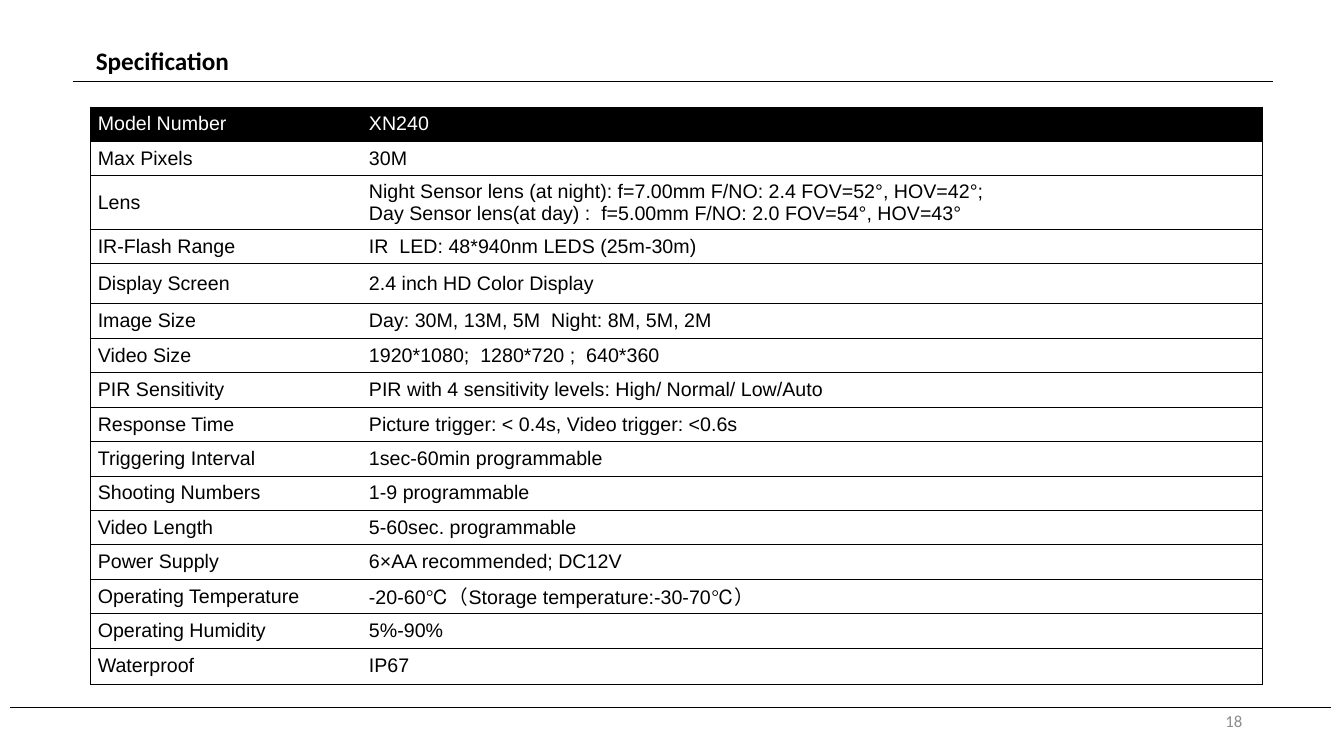
"""Build the specification slide with its two-column table."""
from lxml import etree
from pptx import Presentation
from pptx.dml.color import RGBColor
from pptx.enum import shapes, text
from pptx.oxml import ns
from pptx.util import Inches, Pt


def style(par, size, font, color):
    par.font.size = Pt(size)
    par.font.name = font
    par.font.color.rgb = RGBColor.from_string(color)


def border(cell, sides):
    props = cell._tc.get_or_add_tcPr()
    for spot, side in enumerate("LRTB"):
        line = etree.Element(ns.qn("a:ln" + side), w=str(Pt(0.5)))
        if side in sides:
            fill = etree.SubElement(line, ns.qn("a:solidFill"))
            etree.SubElement(fill, ns.qn("a:srgbClr"), val="000000")
        else:
            etree.SubElement(line, ns.qn("a:noFill"))
        props.insert(spot, line)


specs = [
    ("Model Number", "XN240"),
    ("Max Pixels", "30M"),
    ("Lens", "Night Sensor lens (at night): f=7.00mm F/NO: 2.4 FOV=52°, HOV=42°;\n"
             "Day Sensor lens(at day) :  f=5.00mm F/NO: 2.0 FOV=54°, HOV=43°"),
    ("IR-Flash Range", "IR  LED: 48*940nm LEDS (25m-30m)"),
    ("Display Screen", "2.4 inch HD Color Display"),
    ("Image Size", "Day: 30M, 13M, 5M  Night: 8M, 5M, 2M"),
    ("Video Size", "1920*1080;  1280*720 ;  640*360"),
    ("PIR Sensitivity", "PIR with 4 sensitivity levels: High/ Normal/ Low/Auto"),
    ("Response Time", "Picture trigger: < 0.4s, Video trigger: <0.6s"),
    ("Triggering Interval", "1sec-60min programmable"),
    ("Shooting Numbers", "1-9 programmable"),
    ("Video Length", "5-60sec. programmable"),
    ("Power Supply", "6×AA recommended; DC12V"),
    ("Operating Temperature", "-20-60℃（Storage temperature:-30-70℃）"),
    ("Operating Humidity", "5%-90%"),
    ("Waterproof", "IP67"),
]
tall = {2: 0.53, 4: 0.4, 15: 0.36}
height = 5.73
plain = (height - sum(tall.values())) / (len(specs) - len(tall))

deck = Presentation()
deck.slide_width, deck.slide_height = Inches(13.33), Inches(7.5)
slide = deck.slides.add_slide(deck.slide_layouts[5])

for left, right, y in [(0.1, 13.2, 7.02), (0.72, 12.63, 0.81)]:
    rule = slide.shapes.add_connector(
        shapes.MSO_CONNECTOR.STRAIGHT, Inches(left), Inches(y), Inches(right), Inches(y))
    rule.line.color.rgb = RGBColor.from_string("000000")
    rule.line.width = Pt(0.5)
    etree.SubElement(rule._element.spPr, ns.qn("a:effectLst"))

title = slide.shapes.title
title.left, title.top, title.width, title.height = map(Inches, (0.85, 0.4, 3.29, 0.4))
title.text_frame.text = "Specification"
title.text_frame.auto_size = text.MSO_AUTO_SIZE.NONE
title.text_frame.vertical_anchor = text.MSO_ANCHOR.TOP
head = title.text_frame.paragraphs[0]
head.alignment = text.PP_ALIGN.LEFT
head.font.bold = True
style(head, 18, "Calibri", "000000")

page = slide.shapes.add_textbox(Inches(9.42), Inches(6.95), Inches(3), Inches(0.4)).text_frame
page.word_wrap = True
page.vertical_anchor = text.MSO_ANCHOR.MIDDLE
page.text = "18"
page.paragraphs[0].alignment = text.PP_ALIGN.RIGHT
style(page.paragraphs[0], 12, "Calibri", "8C8C8C")

table = slide.shapes.add_table(
    len(specs), 2, Inches(0.9), Inches(1.06), Inches(11.62), Inches(height)).table
table.first_row = table.horz_banding = False
table.columns[0].width, table.columns[1].width = Inches(2.69), Inches(8.93)
for row, pair in enumerate(specs):
    table.rows[row].height = Inches(tall.get(row, plain))
    for col, words in enumerate(pair):
        cell = table.cell(row, col)
        cell.text = words
        cell.vertical_anchor = text.MSO_ANCHOR.MIDDLE
        cell.margin_left = cell.margin_right = Inches(0.07)
        cell.margin_top = cell.margin_bottom = 0
        cell.fill.solid()
        cell.fill.fore_color.rgb = RGBColor.from_string("FFFFFF" if row else "000000")
        for par in cell.text_frame.paragraphs:
            style(par, 14, "Arial", "000000" if row else "FFFFFF")
        border(cell, "TB" + "LR"[col])

deck.save("out.pptx")
